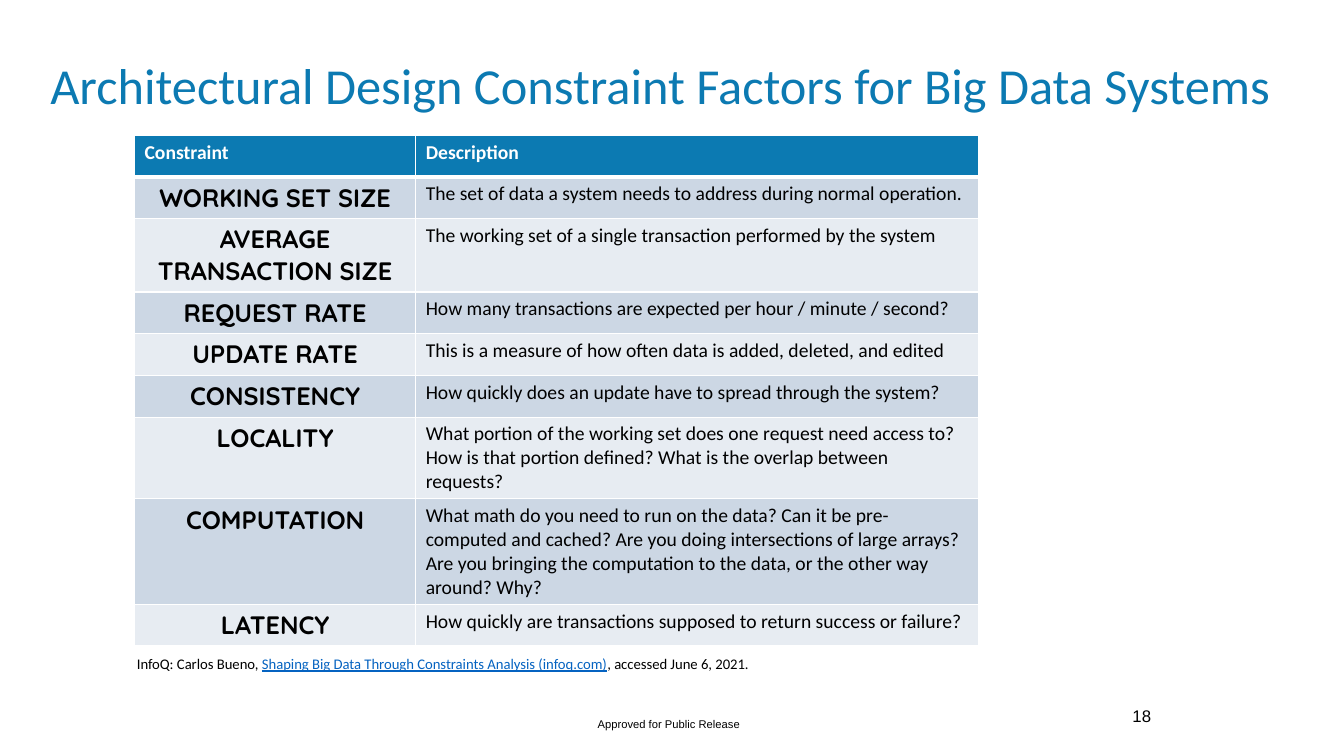
from pptx import Presentation
from pptx import util as u
from pptx.dml.color import RGBColor
from pptx.enum import text
from pptx.oxml import parse_xml
from pptx.oxml.ns import nsdecls

COLORS = {
    "accent": "0C7AB2",
    "link": "0563C1",
    "band_dark": "CCD7E4",
    "band_light": "E7ECF2",
    "black": "000000",
    "white": "FFFFFF",
}

FORMATS = {
    "title": {"name": "Calibri", "size": u.Pt(36), "color": "accent"},
    "header": {"name": "Calibri", "size": u.Pt(14), "bold": True, "color": "white"},
    "constraint": {"name": "Quicksand", "size": u.Pt(18), "bold": True, "color": "black"},
    "description": {"name": "Calibri", "size": u.Pt(14), "bold": False, "color": "black"},
    "source": {"name": "Calibri", "size": u.Pt(10.5), "color": "black"},
    "link": {"name": "Calibri", "size": u.Pt(10.5), "underline": True, "color": "link"},
    "release": {"name": "Arial", "size": u.Pt(8), "color": "black"},
    "number": {"name": "Arial", "size": u.Pt(12), "color": "black"},
}

CONSTRAINTS = [
    ("WORKING SET SIZE", "The set of data a system needs to address during normal operation."),
    ("AVERAGE TRANSACTION SIZE", "The working set of a single transaction performed by the system"),
    ("REQUEST RATE", "How many transactions are expected per hour / minute / second?"),
    ("UPDATE RATE", "This is a measure of how often data is added, deleted, and edited"),
    ("CONSISTENCY", "How quickly does an update have to spread through the system?"),
    ("LOCALITY", "What portion of the working set does one request need access to? "
                 "How is that portion defined? What is the overlap between requests?"),
    ("COMPUTATION", "What math do you need to run on the data? Can it be pre-computed and cached? "
                    "Are you doing intersections of large arrays? Are you bringing the computation "
                    "to the data, or the other way around? Why?"),
    ("LATENCY", "How quickly are transactions supposed to return success or failure?"),
]


def add_run(paragraph, words, format_name):
    run = paragraph.add_run()
    run.text = words
    for attribute, value in FORMATS[format_name].items():
        if attribute == "color":
            run.font.color.rgb = RGBColor.from_string(COLORS[value])
        else:
            setattr(run.font, attribute, value)


def add_text(slide, box, runs, wrap=True, anchor=text.MSO_ANCHOR.TOP, line_spacing=None):
    shape = slide.shapes.add_textbox(*(u.Cm(length) for length in box))
    frame = shape.text_frame
    frame.word_wrap = wrap
    frame.auto_size = text.MSO_AUTO_SIZE.NONE if wrap else text.MSO_AUTO_SIZE.SHAPE_TO_FIT_TEXT
    frame.vertical_anchor = anchor
    paragraph = frame.paragraphs[0]
    paragraph.line_spacing = line_spacing
    for words, format_name in runs:
        add_run(paragraph, words, format_name)


def set_borders(cell, widths):
    properties = cell._tc.get_or_add_tcPr()
    for position, (side, points) in enumerate(widths.items()):
        properties.insert(position, parse_xml(
            f'<a:{side} {nsdecls("a")} w="{u.Pt(points)}"><a:solidFill>'
            f'<a:srgbClr val="{COLORS["white"]}"/></a:solidFill></a:{side}>'))


def fill_cell(cell, words, format_name, fill, alignment, widths):
    cell.fill.solid()
    cell.fill.fore_color.rgb = RGBColor.from_string(COLORS[fill])
    paragraph = cell.text_frame.paragraphs[0]
    paragraph.alignment = alignment
    add_run(paragraph, words, format_name)
    set_borders(cell, widths)


def add_constraint_table(slide, box):
    left, top, width, row_height = box
    rows = [("Constraint", "Description")] + CONSTRAINTS
    frame = slide.shapes.add_table(len(rows), 2, u.Cm(left), u.Cm(top),
                                   u.Cm(width), u.Cm(row_height * len(rows)))
    table = frame.table
    for column, share in zip(table.columns, (1 / 3, 2 / 3)):
        column.width = u.Cm(width * share)
    for row_index, words_in_row in enumerate(rows):
        table.rows[row_index].height = u.Cm(row_height)
        is_header = row_index == 0
        fill = "accent" if is_header else ("band_light", "band_dark")[row_index % 2]
        widths = {"lnL": 1, "lnR": 1, "lnT": 3 if row_index == 1 else 1,
                  "lnB": 3 if is_header else 1}
        for column_index, words in enumerate(words_in_row):
            format_name = "header" if is_header else ("constraint", "description")[column_index]
            centred = format_name == "constraint"
            alignment = text.PP_ALIGN.CENTER if centred else text.PP_ALIGN.LEFT
            fill_cell(table.cell(row_index, column_index), words, format_name,
                      fill, alignment, widths)


def add_footer(slide, box):
    left, top, width, height = box
    add_text(slide, (left, top + 0.3, 4.22, 0.61),
             [("Approved for Public Release", "release")], wrap=False)
    add_text(slide, (left + width - 1.17, top, 1.17, height), [("18", "number")])


def build_constraint_slide(presentation):
    slide = presentation.slides.add_slide(presentation.slide_layouts[6])
    add_text(slide, (1.02, 1.27, 31.75, 1.9),
             [("Architectural Design Constraint Factors for Big Data Systems", "title")],
             anchor=text.MSO_ANCHOR.MIDDLE, line_spacing=0.9)
    add_constraint_table(slide, (3.39, 3.41, 21.26, 1.05))
    add_text(slide, (3.2, 16.38, 16.23, 0.71), [
        ("InfoQ: Carlos Bueno, ", "source"),
        ("Shaping Big Data Through Constraints Analysis (infoq.com)", "link"),
        (", accessed June 6, 2021.", "source"),
    ], wrap=False)
    add_footer(slide, (14.81, 17.65, 14.65, 1.02))


def main():
    presentation = Presentation()
    presentation.slide_width = u.Cm(33.87)
    presentation.slide_height = u.Cm(19.05)
    build_constraint_slide(presentation)
    presentation.save("out.pptx")


if __name__ == "__main__":
    main()
